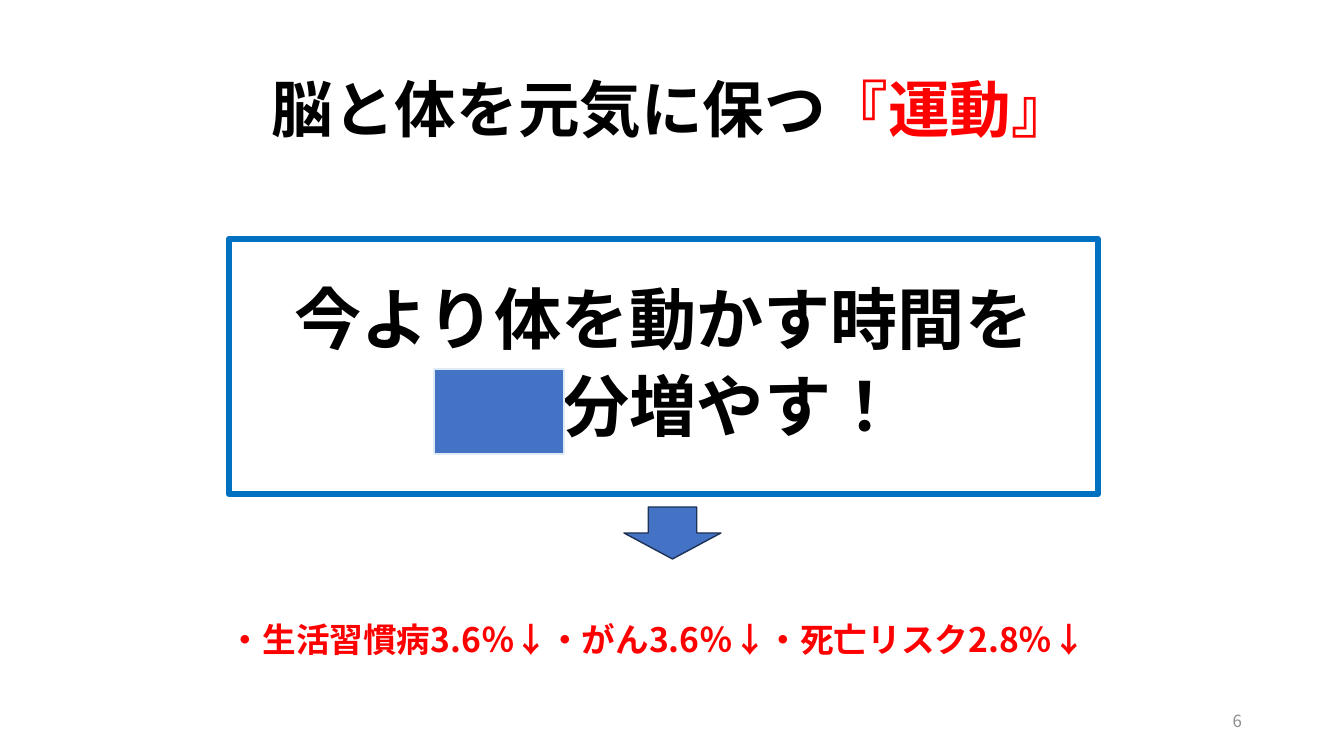
"""Build a slide on exercise that keeps brain and body healthy."""
from lxml import etree
from pptx import Presentation
from pptx.dml.color import RGBColor
from pptx.enum.lang import MSO_LANGUAGE_ID
from pptx.enum.shapes import MSO_SHAPE
from pptx.enum.text import MSO_ANCHOR, MSO_AUTO_SIZE, PP_ALIGN
from pptx.oxml.ns import qn
from pptx.util import Pt

SCALE = 914400 / 100.8
FONT = "Noto Sans CJK JP"
JAPANESE = MSO_LANGUAGE_ID.JAPANESE
BLACK, RED, WHITE, BLUE = "000000", "FF0000", "FFFFFF", "4472C4"
LEFT, CENTER, RIGHT = PP_ALIGN.LEFT, PP_ALIGN.CENTER, PP_ALIGN.RIGHT
TOP, MIDDLE = MSO_ANCHOR.TOP, MSO_ANCHOR.MIDDLE
NO_FIT, GROW = MSO_AUTO_SIZE.NONE, MSO_AUTO_SIZE.SHAPE_TO_FIT_TEXT
RECTANGLE, DOWN_ARROW = MSO_SHAPE.RECTANGLE, MSO_SHAPE.DOWN_ARROW


def place(shape, box, fill=None, line=None, line_width=1):
    """Set position in px, fill and outline."""
    shape.left, shape.top, shape.width, shape.height = [round(n * SCALE) for n in box]
    if fill:
        shape.fill.solid()
        shape.fill.fore_color.rgb = RGBColor.from_string(fill)
    if line:
        shape.line.color.rgb = RGBColor.from_string(line)
        shape.line.width = Pt(line_width)
    else:
        shape.line.fill.background()
    return shape


def write(shape, paragraphs, size, bold=True, align=CENTER, anchor=MIDDLE,
          spacing=0.9, before=0, fit=NO_FIT, last_margin=0):
    """Fill a shape with paragraphs, each a list of (text, colour) runs."""
    frame = shape.text_frame
    frame.word_wrap = True
    frame.auto_size = fit
    frame.vertical_anchor = anchor
    for index, runs in enumerate(paragraphs):
        paragraph = frame.add_paragraph() if index else frame.paragraphs[0]
        paragraph.alignment = align
        paragraph.line_spacing = spacing
        paragraph.space_before = Pt(before)
        margin = last_margin if index == len(paragraphs) - 1 else 0
        properties = paragraph._p.get_or_add_pPr()
        properties.set("marL", str(round(margin * SCALE)))
        properties.set("indent", "0")
        etree.SubElement(properties, qn("a:buNone"))
        for text, colour in runs:
            run = paragraph.add_run()
            run.text = text
            run.font.size = Pt(size)
            run.font.bold = bold
            run.font.color.rgb = RGBColor.from_string(colour)
            run.font.name = FONT
            run.font.language_id = JAPANESE
            etree.SubElement(run._r.get_or_add_rPr(), qn("a:ea"), typeface=FONT)


presentation = Presentation()
presentation.slide_width = round(1344 * SCALE)
presentation.slide_height = round(756 * SCALE)
slide = presentation.slides.add_slide(presentation.slide_layouts[1])
shapes = slide.shapes

title = place(shapes.title, (93, 40, 1159, 146))
write(title, [[("脳と体を元気に保つ", BLACK), ("『運動』", RED)]], 44)

message = place(slide.placeholders[1], (229, 239, 869, 255), line="0070C0", line_width=4.5)
write(message, [[("今より体を動かす時間を", BLACK)], [("分増やす！", BLACK)]], 48,
      before=10, last_margin=134)

page_number = place(shapes.add_textbox(0, 0, 0, 0), (950, 701, 302, 40))
write(page_number, [[("6", "8C8C8C")]], 12, bold=False, align=RIGHT, spacing=1)

effects = place(shapes.add_shape(RECTANGLE, 0, 0, 0, 0), (219, 594, 906, 67), WHITE)
effects.shadow.inherit = False
write(effects, [[("・生活習慣病3.6％↓・がん3.6％↓・死亡リスク2.8％↓", RED)]], 24,
      align=LEFT, anchor=TOP, spacing=1.5, fit=GROW)

for kind, box, line in (
    (DOWN_ARROW, (624, 507, 97, 52), "1E3256"),
    (RECTANGLE, (434, 369, 130, 85), "DEEBF7"),
):
    shape = place(shapes.add_shape(kind, 0, 0, 0, 0), box, BLUE, line)
    shape.shadow.inherit = False

presentation.save("out.pptx")
